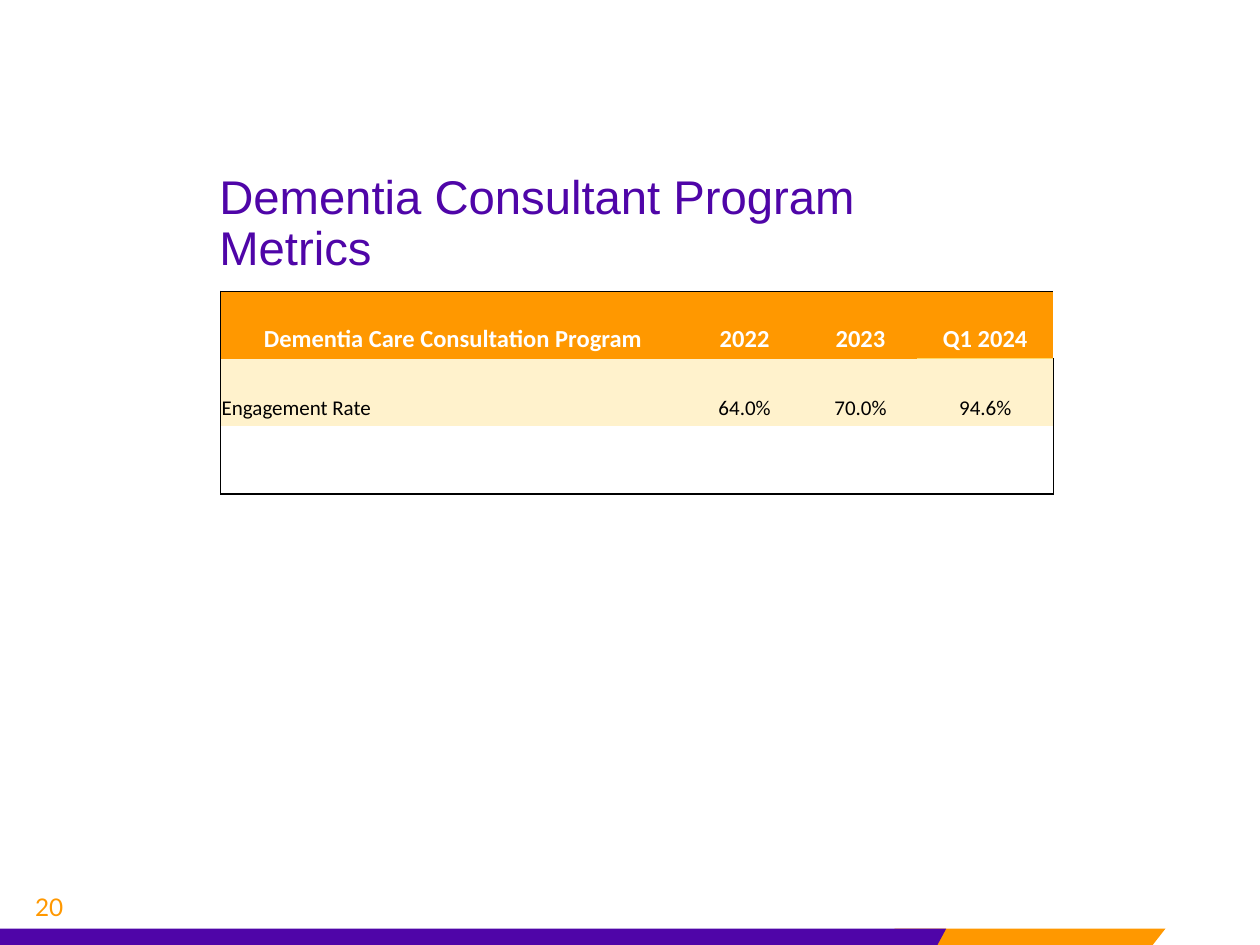
from lxml import etree
from pptx import Presentation
from pptx.dml.color import RGBColor
from pptx.enum.shapes import MSO_SHAPE
from pptx.enum.text import MSO_ANCHOR, PP_ALIGN
from pptx.oxml.ns import qn
from pptx.util import Inches, Pt

LEFT, CENTER = PP_ALIGN.LEFT, PP_ALIGN.CENTER
TOP, BOTTOM = MSO_ANCHOR.TOP, MSO_ANCHOR.BOTTOM
SLANT = MSO_SHAPE.PARALLELOGRAM

COLORS = {"purple": "4F05A8", "orange": "FF9800", "cream": "FFF2CC",
          "gold": "FFD966", "white": "FFFFFF", "black": "000000"}


def color(name):
    return RGBColor.from_string(COLORS[name])


class Deck:
    """Holds the style and the current slide."""

    def __init__(self, prs):
        self.slide = prs.slides.add_slide(prs.slide_layouts[5])
        self.shapes = self.slide.shapes

    def paint(self, shape, fill):
        shape.fill.solid()
        shape.fill.fore_color.rgb = color(fill)
        shape.line.fill.background()
        shape.shadow.inherit = False

    def slant(self, box, fill, adjust):
        shape = self.shapes.add_shape(SLANT, *map(Inches, box))
        shape.adjustments[0] = adjust
        self.paint(shape, fill)

    def outline(self, points, fill):
        spots = [(Inches(x), Inches(y)) for x, y in points]
        maker = self.shapes.build_freeform(*spots[0])
        maker.add_line_segments(spots[1:])
        self.paint(maker.convert_to_shape(), fill)

    def put_text(self, frame, text, font, size, ink, align=LEFT, bold=False):
        para = frame.paragraphs[0]
        para.text = text
        para.alignment = align
        para.font.name, para.font.size = font, Pt(size)
        para.font.bold, para.font.color.rgb = bold, color(ink)
        return para

    def title(self, box, text):
        shape = self.shapes.title
        shape.left, shape.top, shape.width, shape.height = map(Inches, box)
        frame = shape.text_frame
        frame.margin_left = frame.margin_right = 0
        frame.margin_top = frame.margin_bottom = 0
        frame.vertical_anchor = TOP
        frame.word_wrap = True
        para = self.put_text(frame, text, "Arial", 27, "purple")
        para.line_spacing = 0.9

    def label(self, box, text):
        frame = self.shapes.add_textbox(*map(Inches, box)).text_frame
        frame.word_wrap = True
        para = self.put_text(frame, text, "Lato", 13.9, "orange")
        para.line_spacing = 0.8

    def border(self, cell, side, ink=None, width=0.5):
        props = cell._tc.get_or_add_tcPr()
        line = etree.SubElement(props, qn(f"a:ln{side}"), w=str(Pt(width)))
        if ink:
            fill = etree.SubElement(line, qn("a:solidFill"))
            etree.SubElement(fill, qn("a:srgbClr"), val=COLORS[ink])
        else:
            etree.SubElement(line, qn("a:noFill"))

    def table(self, box, widths, rows):
        table = self.shapes.add_table(
            len(rows), len(widths), *map(Inches, box)).table
        table.first_row = table.horz_banding = False
        for col, width in zip(table.columns, widths):
            col.width = Inches(width)
        last_row, last_col = len(rows) - 1, len(widths) - 1
        for r, texts in enumerate(rows):
            head, foot = r == 0, r == last_row
            for c, text in enumerate(texts):
                cell, end = table.cell(r, c), c == last_col
                # Frame the table, with a gold rule under the last heading
                gold = "gold" if end else None
                self.border(cell, "L", "black" if c == 0 else None)
                self.border(cell, "R", "black" if end and not head else None)
                self.border(cell, "T", "black" if head else
                            gold if r == 1 else None)
                self.border(cell, "B", "black" if foot else
                            gold if head else None, 1 if foot else 0.5)
                # Fill and text
                if foot:
                    cell.fill.background()
                else:
                    cell.fill.solid()
                    cell.fill.fore_color.rgb = color(
                        "orange" if head else "cream")
                cell.vertical_anchor = BOTTOM
                cell.margin_left = cell.margin_right = Inches(0.01)
                cell.margin_top, cell.margin_bottom = Inches(0.01), Inches(0.04)
                self.put_text(cell.text_frame, text, "Calibri",
                              14 if head else 12, "white" if head else "black",
                              CENTER if head or c else LEFT, head)


def main():
    prs = Presentation()
    prs.slide_width, prs.slide_height = Inches(10), Inches(7.5)
    deck = Deck(prs)

    # Footer bands
    deck.slant((7, 7.37, 2.25, 0.13), "orange", 0.78)
    deck.outline([(0, 7.37), (7.51, 7.37), (7.44, 7.5), (0, 7.5)], "purple")

    # Title
    deck.title((1.74, 1.38, 6.23, 0.65), "Dementia Consultant Program Metrics")

    # Metrics table
    deck.table((1.75, 2.31, 6.61, 1.61), (3.69, 0.94, 0.9, 1.08), [
        ("Dementia Care Consultation Program", "2022", "2023", "Q1 2024"),
        ("Engagement Rate", "64.0%", "70.0%", "94.6%"),
        ("", "", "", ""),
    ])

    # Page number
    deck.label((0.18, 7.08, 2.33, 0.3), "20")
    prs.save("out.pptx")


if __name__ == "__main__":
    main()
